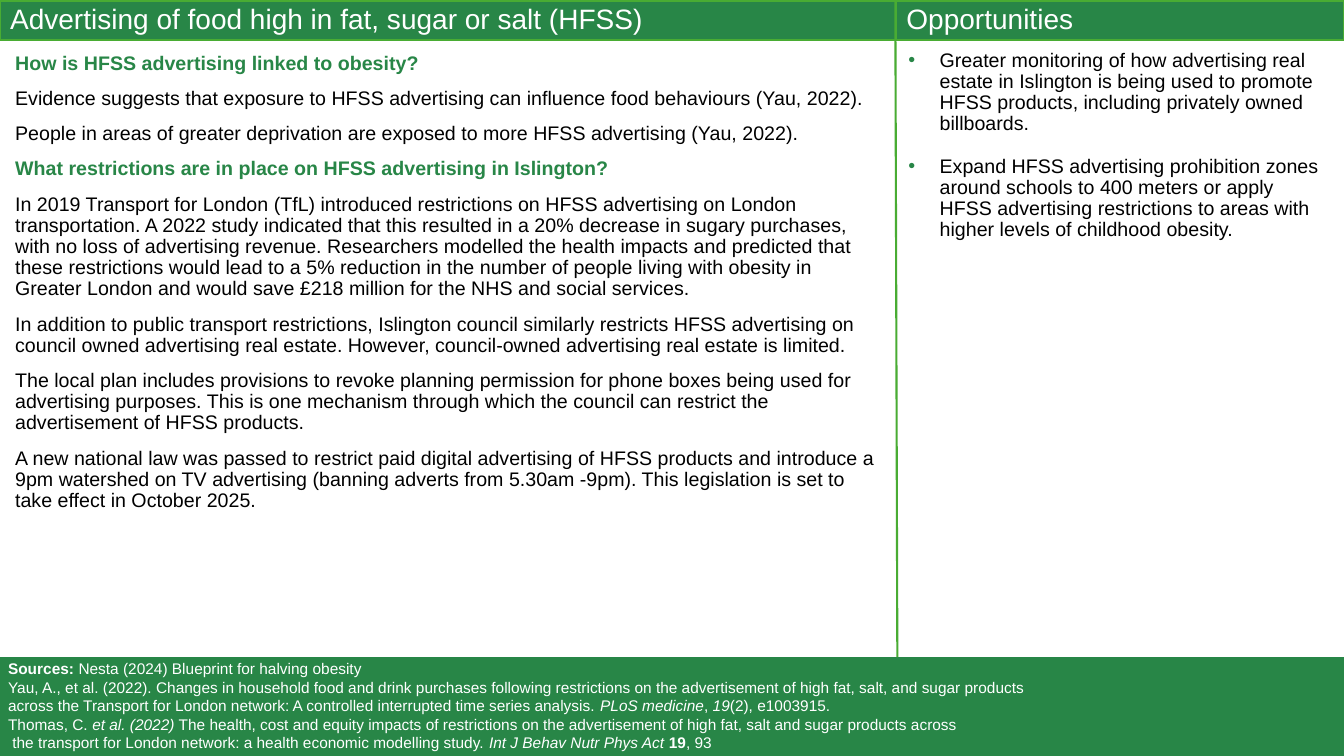
from lxml.etree import SubElement
from pptx import Presentation
from pptx.dml.color import RGBColor
from pptx.enum.shapes import MSO_CONNECTOR, MSO_SHAPE
from pptx.enum.text import MSO_ANCHOR, MSO_AUTO_SIZE, PP_ALIGN
from pptx.oxml.ns import qn
from pptx.util import Inches, Pt

GREEN = RGBColor(0x28, 0x86, 0x47)
LIME = RGBColor(0x49, 0xAC, 0x33)
WHITE = RGBColor(0xFF, 0xFF, 0xFF)
BLACK = RGBColor(0x00, 0x00, 0x00)

QUESTION = {"color": GREEN, "bold": True}
BOLD = {"bold": True}
ITALIC = {"italic": True}

ADVERTISING = [
    ("How is HFSS advertising linked to obesity?", QUESTION),
    ("Evidence suggests that exposure to HFSS advertising can influence food behaviours (Yau, 2022).", {}),
    ("People in areas of greater deprivation are exposed to more HFSS advertising (Yau, 2022).", {}),
    ("What restrictions are in place on HFSS advertising in Islington?", QUESTION),
    ("In 2019 Transport for London (TfL) introduced restrictions on HFSS advertising on London "
     "transportation. A 2022 study indicated that this resulted in a 20% decrease in sugary purchases, "
     "with no loss of advertising revenue. Researchers modelled the health impacts and predicted that "
     "these restrictions would lead to a 5% reduction in the number of people living with obesity in "
     "Greater London and would save £218 million for the NHS and social services.", {}),
    ("In addition to public transport restrictions, Islington council similarly restricts HFSS "
     "advertising on council owned advertising real estate. However, council-owned advertising real "
     "estate is limited.", {}),
    ("The local plan includes provisions to revoke planning permission for phone boxes being used for "
     "advertising purposes. This is one mechanism through which the council can restrict the "
     "advertisement of HFSS products.", {}),
    ("A new national law was passed to restrict paid digital advertising of HFSS products and introduce "
     "a 9pm watershed on TV advertising (banning adverts from 5.30am -9pm). This legislation is set to "
     "take effect in October 2025.", {}),
]

OPPORTUNITIES = [
    ("Greater monitoring of how advertising real estate in Islington is being used to promote HFSS "
     "products, including privately owned billboards.", {}),
    ("Expand HFSS advertising prohibition zones around schools to 400 meters or apply HFSS advertising "
     "restrictions to areas with higher levels of childhood obesity.", {}),
]

SOURCES = [
    [("Sources: ", BOLD), ("Nesta (2024) Blueprint for halving obesity", {})],
    [("Yau, A., et al. (2022). Changes in household food and drink purchases following restrictions on "
      "the advertisement of high fat, salt, and sugar products", {})],
    [("across the Transport for London network: A controlled interrupted time series analysis. ", {}),
     ("PLoS medicine", ITALIC), (", ", {}), ("19", ITALIC), ("(2), e1003915.", {})],
    [("Thomas, C. ", {}), ("et al. (2022)", ITALIC),
     (" The health, cost and equity impacts of restrictions on the advertisement of high fat, salt and "
      "sugar products across\v the transport for London network: a health economic modelling study. ", {}),
     ("Int J Behav Nutr Phys Act ", ITALIC), ("19", BOLD), (", 93", {})],
]


def write(paragraph, text, size=14, color=BLACK, bold=False, italic=False):
    for position, line in enumerate(text.split("\v")):
        if position:
            paragraph.add_line_break()
        run = paragraph.add_run()
        run.text = line
        font = run.font
        font.name = "Arial"
        font.size = Pt(size)
        font.color.rgb = color
        font.bold = bold
        font.italic = italic


class BriefingSlide:
    """Holds the shared style and the slide being filled."""

    def __init__(self, slide):
        self.slide = slide
        self.shapes = slide.shapes

    def place(self, shape, left, top, width, height):
        shape.left, shape.top = Inches(left), Inches(top)
        shape.width, shape.height = Inches(width), Inches(height)

    def prepare(self, shape, anchor=MSO_ANCHOR.TOP):
        frame = shape.text_frame
        frame.auto_size = MSO_AUTO_SIZE.NONE
        frame.word_wrap = True
        frame.vertical_anchor = anchor
        frame.margin_left = frame.margin_top = frame.margin_right = frame.margin_bottom = 0
        return frame

    def indent(self, paragraph, margin=0, bullet=False):
        properties = paragraph._p.get_or_add_pPr()
        properties.set("marL", str(Inches(margin)))
        properties.set("indent", str(-Inches(margin) if bullet else 0))
        if bullet:
            tint = SubElement(properties, qn("a:buClr"))
            SubElement(tint, qn("a:srgbClr"), val=str(GREEN))
            SubElement(properties, qn("a:buFont"), typeface="Arial")
            SubElement(properties, qn("a:buChar"), char="•")
        else:
            SubElement(properties, qn("a:buNone"))

    def band(self, left, top, width, height):
        band = self.shapes.add_shape(
            MSO_SHAPE.RECTANGLE, Inches(left), Inches(top), Inches(width), Inches(height))
        band.shadow.inherit = False
        band.fill.solid()
        band.fill.fore_color.rgb = GREEN
        band.line.fill.background()

    def divider(self, x1, y1, x2, y2):
        divider = self.shapes.add_connector(
            MSO_CONNECTOR.STRAIGHT, Inches(x1), Inches(y1), Inches(x2), Inches(y2))
        divider.line.color.rgb = LIME
        divider.line.width = Pt(1.5)
        SubElement(divider._element.spPr, qn("a:effectLst"))

    def heading(self, index, text, left, width):
        heading = self.slide.placeholders[index]
        self.place(heading, left, 0.01, width, 0.39)
        heading.fill.solid()
        heading.fill.fore_color.rgb = GREEN
        heading.line.color.rgb = LIME
        heading.line.width = Pt(1.5)
        paragraph = self.prepare(heading, MSO_ANCHOR.MIDDLE).paragraphs[0]
        self.indent(paragraph, 0.1)
        paragraph.alignment = PP_ALIGN.LEFT
        paragraph.line_spacing = 0.9
        paragraph.space_before = Pt(0)
        write(paragraph, text, size=20, color=WHITE)

    def body(self, index, items, box, gap=10, margin=0, bullet=False):
        body = self.slide.placeholders[index]
        self.place(body, *box)
        frame = self.prepare(body)
        for position, (text, style) in enumerate(items):
            paragraph = frame.add_paragraph() if position else frame.paragraphs[0]
            self.indent(paragraph, margin, bullet)
            paragraph.alignment = PP_ALIGN.LEFT
            paragraph.line_spacing = 0.9
            paragraph.space_before = Pt(gap if position else 0)
            write(paragraph, text, **style)

    def sources(self, entries, left, top, width, height):
        references = self.shapes.add_textbox(
            Inches(left), Inches(top), Inches(width), Inches(height))
        frame = self.prepare(references)
        for position, pieces in enumerate(entries):
            paragraph = frame.add_paragraph() if position else frame.paragraphs[0]
            for text, style in pieces:
                write(paragraph, text, size=11, color=WHITE, **style)

    def remove_empty(self):
        for placeholder in list(self.slide.placeholders):
            if not placeholder.text_frame.text:
                placeholder._element.getparent().remove(placeholder._element)


def main():
    deck = Presentation()
    deck.slide_width, deck.slide_height = Inches(13.33), Inches(7.5)
    briefing = BriefingSlide(deck.slides.add_slide(deck.slide_layouts[4]))
    briefing.band(0, 6.52, 13.33, 0.98)
    briefing.divider(8.88, 0.02, 8.9, 6.52)
    briefing.heading(0, "Advertising of food high in fat, sugar or salt (HFSS)", 0, 8.9)
    briefing.body(2, ADVERTISING, (0.15, 0.53, 8.62, 5.8))
    briefing.heading(3, "Opportunities", 8.89, 4.44)
    briefing.body(4, OPPORTUNITIES, (9.01, 0.5, 4.14, 3.08), gap=15, margin=0.31, bullet=True)
    briefing.sources(SOURCES, 0.08, 6.54, 11.01, 0.95)
    briefing.remove_empty()
    deck.save("out.pptx")


if __name__ == "__main__":
    main()
